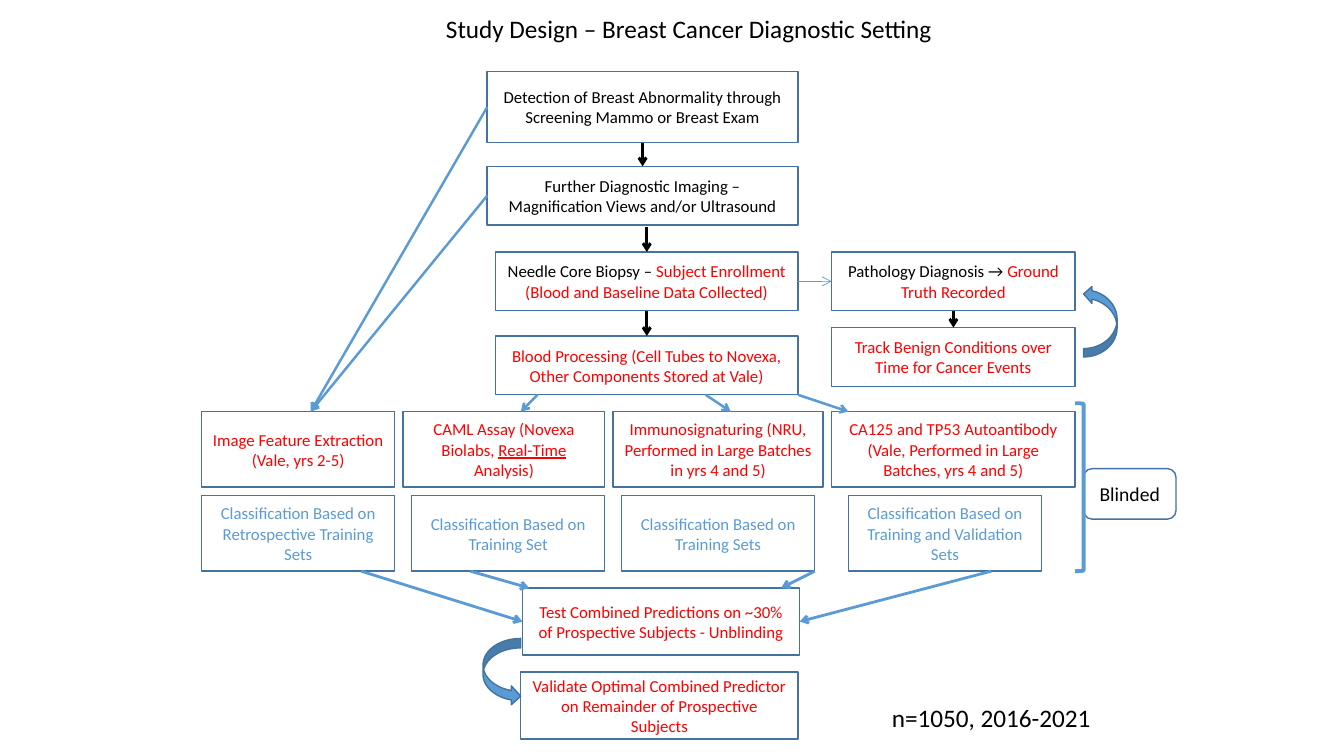
from lxml.etree import SubElement
from pptx import Presentation
from pptx.dml.color import RGBColor
from pptx.enum.shapes import MSO_CONNECTOR as Line, MSO_SHAPE as Shape
from pptx.enum.text import MSO_ANCHOR as Anchor, MSO_AUTO_SIZE as Fit, PP_ALIGN as Align
from pptx.oxml.ns import qn
from pptx.util import Inches, Pt

COLORS = {"black": "000000", "red": "FF0000", "blue": "5B9BD5", "edge": "43739E"}
TOP, LEFT, BOTTOM, RIGHT = range(4)


def color(name):
    return RGBColor.from_string(COLORS[name])


class Diagram:
    font = "Calibri"
    columns, rows = 160, 90

    def __init__(self, prs):
        self.unit_x = prs.slide_width / self.columns
        self.unit_y = prs.slide_height / self.rows
        self.s = prs.slides.add_slide(prs.slide_layouts[6])

    def place(self, x, y):
        return round(x * self.unit_x), round(y * self.unit_y)

    def add_text(self, tf, runs, size, align):
        tf.word_wrap = True
        p = tf.paragraphs[0]
        p.alignment = align
        for text, name, *underline in runs:
            r = p.add_run()
            r.text = text
            r.font.name, r.font.size = self.font, Pt(size)
            r.font.color.rgb = color(name)
            if underline:
                r.font.underline = True

    def shape(self, kind, x, y, w, h, fill=None, line="edge", width=1):
        sp = self.s.shapes.add_shape(kind, *self.place(x, y), *self.place(w, h))
        sp.shadow.inherit = False
        if fill:
            sp.fill.solid()
            sp.fill.fore_color.rgb = color(fill)
        else:
            sp.fill.background()
        sp.line.color.rgb = color(line)
        sp.line.width = Pt(width)
        return sp

    def box(self, x, y, w, h, *runs, size=12, kind=Shape.RECTANGLE):
        sp = self.shape(kind, x, y, w, h)
        sp.text_frame.vertical_anchor = Anchor.MIDDLE
        self.add_text(sp.text_frame, runs, size, Align.CENTER)
        return sp

    def label(self, x, y, w, h, text, align):
        sp = self.s.shapes.add_textbox(*self.place(x, y), *self.place(w, h))
        self.add_text(sp.text_frame, [(text, "black")], 18, align)
        sp.text_frame.auto_size = Fit.SHAPE_TO_FIT_TEXT

    def end_point(self, end):
        sp, side = end
        if isinstance(sp, (int, float)):
            return self.place(*end)
        across = {LEFT: 0, RIGHT: sp.width}.get(side, sp.width // 2)
        down = {TOP: 0, BOTTOM: sp.height}.get(side, sp.height // 2)
        return sp.left + across, sp.top + down

    def arrow(self, start, end, name="blue", width=2.0):
        cx = self.s.shapes.add_connector(
            Line.STRAIGHT, *self.end_point(start), *self.end_point(end))
        for target, connect in ((start, cx.begin_connect), (end, cx.end_connect)):
            if not isinstance(target[0], (int, float)):
                connect(*target)
        cx.line.color.rgb = color(name)
        cx.line.width = Pt(width)
        SubElement(cx.line._get_or_add_ln(), qn("a:tailEnd"), type="arrow")
        SubElement(cx._element.spPr, qn("a:effectLst"))


def main():
    prs = Presentation()
    prs.slide_width, prs.slide_height = Inches(13.33), Inches(7.5)
    d = Diagram(prs)

    d.label(31, 1, 102, 4.8, "Study Design – Breast Cancer Diagnostic Setting", Align.CENTER)
    d.label(105, 83, 32, 4.8, "n=1050, 2016-2021", Align.LEFT)

    detection = d.box(58, 8.5, 37, 8.5, (
        "Detection of Breast Abnormality through Screening Mammo or Breast Exam", "black"))
    imaging = d.box(58, 19.8, 37, 7, (
        "Further Diagnostic Imaging – Magnification Views and/or Ultrasound", "black"))
    biopsy = d.box(59, 30, 36, 7, ("Needle Core Biopsy – ", "black"),
                   ("Subject Enrollment (Blood and Baseline Data Collected)", "red"))
    blood = d.box(59, 40, 36, 7, (
        "Blood Processing (Cell Tubes to Novexa, Other Components Stored at Vale)", "red"))
    pathology = d.box(99, 30, 29, 7, ("Pathology Diagnosis → ", "black"),
                      ("Ground Truth Recorded", "red"))
    tracking = d.box(99, 39, 29, 7, (
        "Track Benign Conditions over Time for Cancer Events", "red"))

    assays = [
        (24, 23, [("Image Feature Extraction (Vale, yrs 2-5)", "red")]),
        (48, 24, [("CAML Assay (Novexa Biolabs, ", "red"),
                  ("Real-Time", "red", True), (" Analysis)", "red")]),
        (73, 25, [("Immunosignaturing (NRU, Performed in Large Batches in yrs 4 and 5)", "red")]),
        (99, 29, [("CA125 and TP53 Autoantibody (Vale, Performed in Large Batches, "
                   "yrs 4 and 5)", "red")]),
    ]
    for x, w, runs in assays:
        d.box(x, 49, w, 9, *runs)

    training = [(24, "Retrospective Training Sets"), (49, "Training Set"),
                (74, "Training Sets"), (101, "Training and Validation Sets")]
    for x, basis in training:
        d.box(x, 59, 23, 9, (f"Classification Based on {basis}", "blue"))

    combined = d.box(62.2, 70, 33, 8, (
        "Test Combined Predictions on ~30% of Prospective Subjects - Unblinding", "red"))
    d.box(62, 80, 33, 8, (
        "Validate Optimal Combined Predictor on Remainder of Prospective Subjects", "red"))
    d.box(129, 55.8, 11, 6, ("Blinded", "black"), size=14, kind=Shape.ROUNDED_RECTANGLE)

    for start, end in [((detection, BOTTOM), (imaging, TOP)),
                       ((77, 27), (biopsy, TOP)),
                       ((biopsy, BOTTOM), (blood, TOP)),
                       ((pathology, BOTTOM), (tracking, TOP))]:
        d.arrow(start, end, "black")
    d.arrow((biopsy, RIGHT), (pathology, LEFT), width=0.5)
    for start, end in [((imaging, LEFT), (37, 49)), ((detection, LEFT), (37, 49)),
                       ((64, 47), (62, 49)), ((84, 47), (87, 49)), ((95, 47), (101, 49))]:
        d.arrow(start, end, width=1.75)
    for start, end in [((43, 68), (combined, LEFT)), ((56, 68), (63, 70)),
                       ((97, 68), (93, 70)), ((118, 68), (combined, RIGHT))]:
        d.arrow(start, end)

    d.shape(Shape.CURVED_RIGHT_ARROW, 57.5, 76, 4.5, 8, fill="blue")
    follow_up = d.shape(Shape.CURVED_LEFT_ARROW, 129, 34, 4, 8.5, fill="blue")
    follow_up._element.spPr.xfrm.set("flipV", "1")
    d.shape(Shape.RIGHT_BRACKET, 128, 48, 1, 20, line="blue", width=2.75)

    prs.save("out.pptx")


if __name__ == "__main__":
    main()
